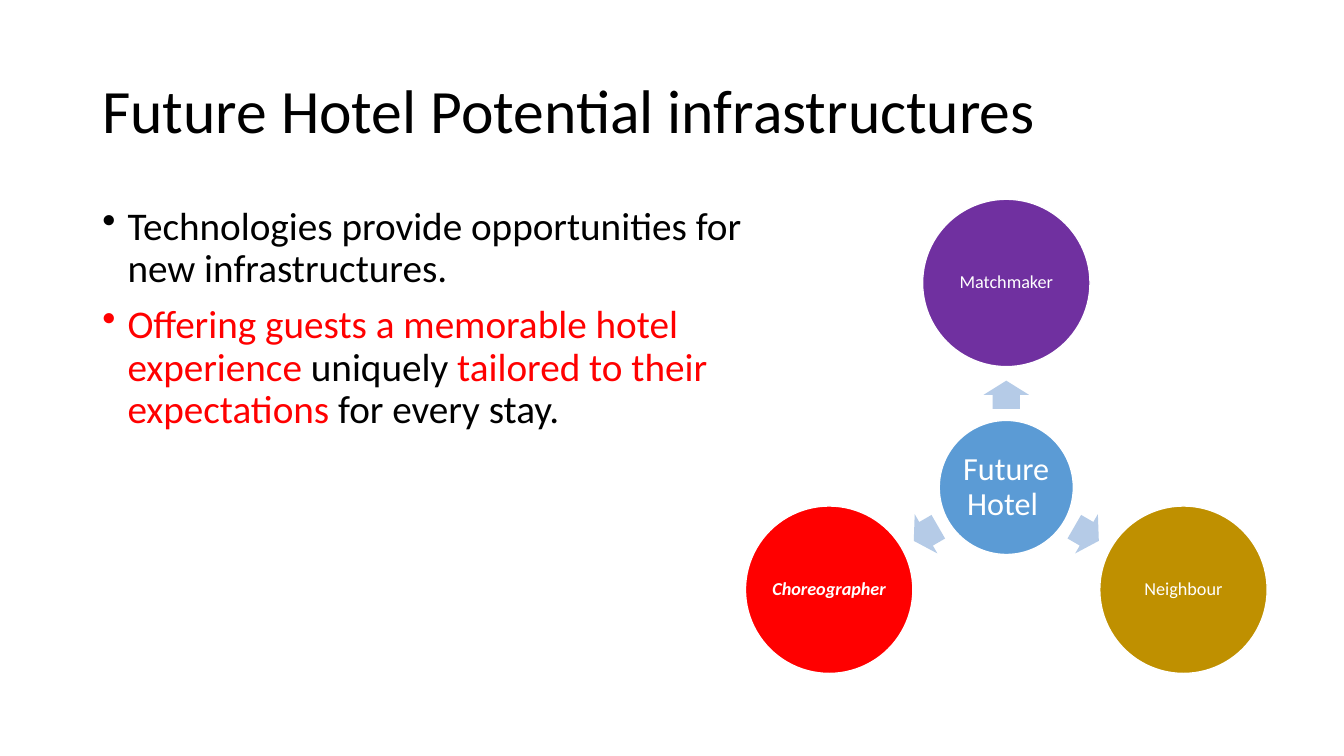
import math

from lxml import etree
from pptx import Presentation
from pptx.dml.color import RGBColor
from pptx.enum.shapes import MSO_SHAPE
from pptx.enum.text import MSO_ANCHOR, PP_ALIGN
from pptx.oxml.ns import qn
from pptx.util import Pt

OVAL, ARROW = MSO_SHAPE.OVAL, MSO_SHAPE.RIGHT_ARROW
TOP, MIDDLE = MSO_ANCHOR.TOP, MSO_ANCHOR.MIDDLE
LEFT, CENTER = PP_ALIGN.LEFT, PP_ALIGN.CENTER
BLACK, WHITE, RED = "000000", "FFFFFF", "FF0000"


def color(hex_value):
    return RGBColor.from_string(hex_value)


def write_text(shape, paragraphs, size, anchor, align, inset=None, **font_format):
    """Fill a shape with paragraphs, each a list of (text, colour) runs."""
    frame = shape.text_frame
    frame.word_wrap = True
    frame.vertical_anchor = anchor
    if inset is not None:
        for side in ("left", "top", "right", "bottom"):
            setattr(frame, f"margin_{side}", Pt(inset))
    for index, runs in enumerate(paragraphs):
        paragraph = frame.add_paragraph() if index else frame.paragraphs[0]
        paragraph.alignment = align
        paragraph.line_spacing = 0.9
        for text, text_color in runs:
            run = paragraph.add_run()
            run.text = text
            run.font.color.rgb = color(text_color)
            font_values = {"name": "Calibri", "size": Pt(size), **font_format}
            for name, value in font_values.items():
                setattr(run.font, name, value)
    return frame


presentation = Presentation()
presentation.slide_width, presentation.slide_height = Pt(960), Pt(540)
slide = presentation.slides.add_slide(presentation.slide_layouts[6])
shapes = slide.shapes

# Title
title = shapes.add_textbox(Pt(66), Pt(28.75), Pt(828), Pt(104.4))
write_text(title, [[("Future Hotel Potential infrastructures", BLACK)]], 44, MIDDLE, LEFT)

# Bulleted text
body = shapes.add_textbox(Pt(66), Pt(143.75), Pt(490.3), Pt(342.6))
bullets = [
    [("Technologies provide opportunities for new infrastructures.", BLACK)],
    [
        ("Offering guests a memorable hotel experience ", RED),
        ("uniquely ", BLACK),
        ("tailored to their expectations", RED),
        (" for every stay.", BLACK),
    ],
]
body_frame = write_text(body, bullets, 28, TOP, LEFT)
for paragraph in body_frame.paragraphs:
    paragraph.space_before = Pt(10)
    properties = paragraph._p.get_or_add_pPr()
    properties.set("marL", str(Pt(18)))
    properties.set("indent", str(-Pt(18)))
    etree.SubElement(properties, qn("a:buChar")).set("char", "•")

# Radial diagram: a hub, and an arrow and a circle at each angle
HUB_X, HUB_Y = 718.8, 348.2
ARROW_DISTANCE, CIRCLE_DISTANCE = 66.2, 146.1
HUB_SIZE, CIRCLE_SIZE = 95.8, 119.6
ARROW_WIDTH, ARROW_HEIGHT = 20.2, 32.4

# angle, distance, preset, width, height, fill, label, text size, inset, font format
parts = [(0, 0, OVAL, HUB_SIZE, HUB_SIZE, "5B9BD5", "Future Hotel ", 23, 2.2, {})]
roles = [
    (270, "Matchmaker", "7030A0", {}),
    (30, "Neighbour", "BF9000", {}),
    (150, "Choreographer", RED, {"bold": True, "italic": True}),
]
for angle, label, fill, font_format in roles:
    parts.append((angle, ARROW_DISTANCE, ARROW, ARROW_WIDTH, ARROW_HEIGHT,
                  "B5CBE7", None, None, None, {}))
    parts.append((angle, CIRCLE_DISTANCE, OVAL, CIRCLE_SIZE, CIRCLE_SIZE,
                  fill, label, 13, 1.3, font_format))

for angle, distance, preset, width, height, fill, label, size, inset, font_format in parts:
    center_x = HUB_X + distance * math.cos(math.radians(angle))
    center_y = HUB_Y + distance * math.sin(math.radians(angle))
    shape = shapes.add_shape(preset, Pt(center_x - width / 2), Pt(center_y - height / 2),
                             Pt(width), Pt(height))
    shape.shadow.inherit = False
    shape.fill.solid()
    shape.fill.fore_color.rgb = color(fill)
    if label:
        shape.line.color.rgb = color(WHITE)
        shape.line.width = Pt(1)
        write_text(shape, [[(label, WHITE)]], size, MIDDLE, CENTER, inset, **font_format)
    else:
        shape.line.fill.background()
        shape.rotation = angle
        shape.adjustments[0], shape.adjustments[1] = 0.6, 0.5

presentation.save("out.pptx")
